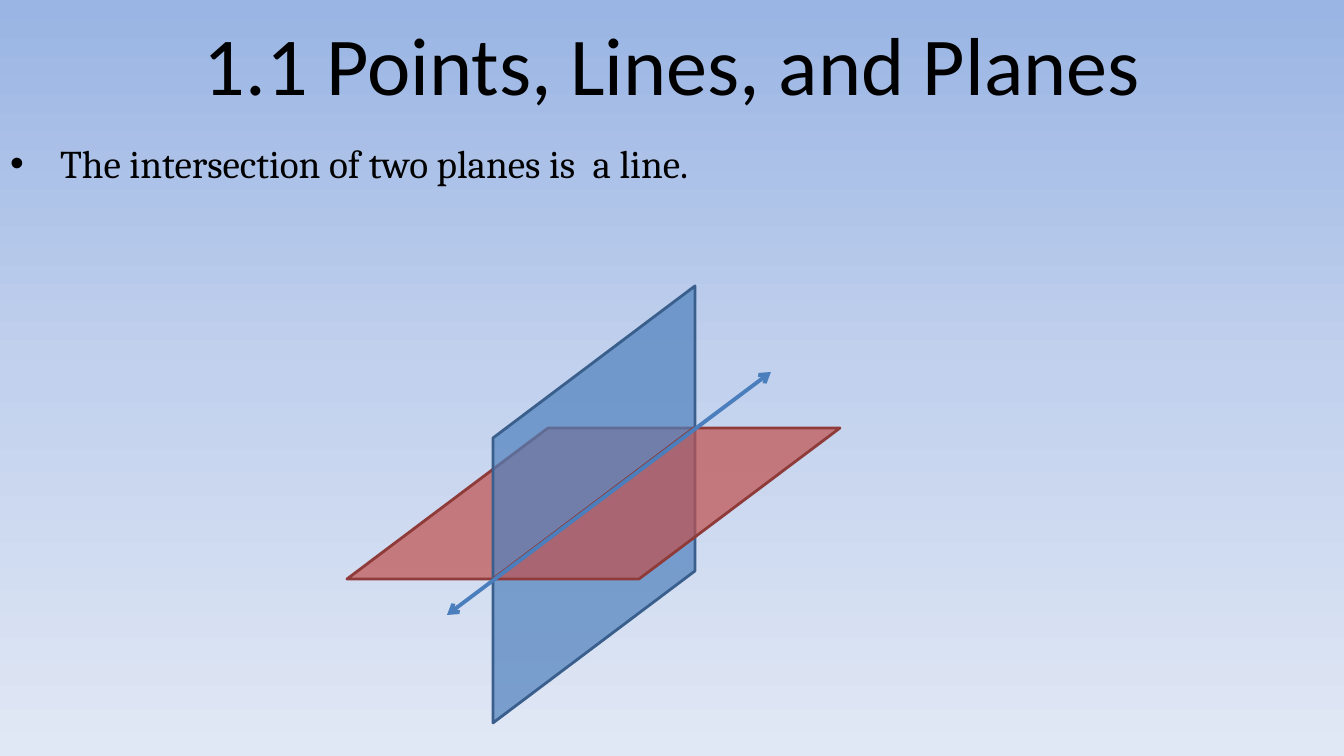
from copy import deepcopy

from lxml.etree import SubElement
from pptx import Presentation
from pptx.dml.color import RGBColor
from pptx.enum.shapes import MSO_CONNECTOR as CONNECTOR, MSO_SHAPE as SHAPE
from pptx.enum.text import MSO_ANCHOR as ANCHOR, MSO_AUTO_SIZE as AUTO_SIZE, PP_ALIGN as ALIGN
from pptx.oxml.ns import qn
from pptx.util import Pt

EMU_PER_PX = 914400 / 100.8
WIDTH, HEIGHT = 1344, 756
COLORS = {
    "text": "000000",
    "sky_top": "9AB5E4",
    "sky_middle": "C2D1ED",
    "sky_bottom": "E1E8F5",
    "red": "C0504D",
    "red_edge": "8E3B39",
    "blue": "4F81BD",
    "blue_edge": "3A5F8C",
    "line": "4B7EBC",
}


def px(length):
    return round(length * EMU_PER_PX)


def color(name):
    return RGBColor.from_string(COLORS[name])


def write(frame, text, font, size, align=ALIGN.LEFT, anchor=ANCHOR.TOP, bullet=None, indent=0):
    frame.word_wrap = True
    frame.auto_size = AUTO_SIZE.NONE
    frame.vertical_anchor = anchor
    frame.text = text
    paragraph = frame.paragraphs[0]
    paragraph.alignment = align
    paragraph.space_before = Pt(0)
    if bullet:
        properties = paragraph._p.get_or_add_pPr()
        properties.set("marL", str(px(indent)))
        properties.set("indent", str(-px(indent)))
        SubElement(properties, qn("a:buChar"), char=bullet)
    run_font = paragraph.runs[0].font
    run_font.name = font
    run_font.size = Pt(size)
    run_font.color.rgb = color("text")


class GeometrySlide:
    def __init__(self, presentation):
        self.slide = presentation.slides.add_slide(presentation.slide_layouts[1])
        self.shapes = self.slide.shapes

    def background(self, *names):
        fill = self.slide.background.fill
        fill.gradient()
        fill.gradient_angle = 270
        stop_list = self.slide.element.find(".//" + qn("a:gsLst"))
        while len(stop_list) < len(names):
            stop_list.append(deepcopy(stop_list[0]))
        for index, (stop, name) in enumerate(zip(fill.gradient_stops, names)):
            stop.position = index / (len(names) - 1)
            stop.color.rgb = color(name)

    def placeholder(self, index, top, height, text, **style):
        shape = self.slide.placeholders[index]
        shape.left, shape.top = px(0), px(top)
        shape.width, shape.height = px(WIDTH), px(height)
        write(shape.text_frame, text, **style)

    def plane(self, left, top, width, height, name, slant, upright=False):
        shape = self.shapes.add_shape(
            SHAPE.PARALLELOGRAM, px(left), px(top), px(width), px(height))
        shape.adjustments[0] = slant / min(width, height)
        shape.shadow.inherit = False
        if upright:
            shape.rotation = 270
            shape.element.spPr.xfrm.set("flipV", "1")
        shape.fill.solid()
        shape.fill.fore_color.rgb = color(name)
        fill_color = shape.element.spPr.find(qn("a:solidFill")).find(qn("a:srgbClr"))
        SubElement(fill_color, qn("a:alpha"), val="70000")
        shape.line.color.rgb = color(name + "_edge")
        shape.line.width = Pt(2)

    def double_arrow(self, start, end, name, width):
        connector = self.shapes.add_connector(
            CONNECTOR.STRAIGHT, *(px(value) for value in start + end))
        connector.line.color.rgb = color(name)
        connector.line.width = Pt(width)
        outline = connector.line._get_or_add_ln()
        for tag in ("a:headEnd", "a:tailEnd"):
            SubElement(outline, qn(tag), type="arrow")
        SubElement(connector.element.spPr, qn("a:effectLst"))


def main():
    presentation = Presentation()
    presentation.slide_width, presentation.slide_height = px(WIDTH), px(HEIGHT)
    page = GeometrySlide(presentation)
    page.background("sky_top", "sky_middle", "sky_bottom")
    page.placeholder(0, 0, 126, "1.1 Points, Lines, and Planes", font="Calibri",
                     size=58.7, align=ALIGN.CENTER, anchor=ANCHOR.MIDDLE)
    page.placeholder(1, 134, 567, "The intersection of two planes is  a line.",
                     font="Cambria", size=28, bullet="•", indent=50)
    page.plane(347, 428, 347, 151, "red", 201)
    for top in (332, 475):
        page.plane(447, top, 294, 202, "blue", 152, upright=True)
    page.plane(493, 428, 347, 151, "red", 201)
    page.double_arrow((447, 615), (771, 372), "line", 2.75)
    presentation.save("out.pptx")


if __name__ == "__main__":
    main()
